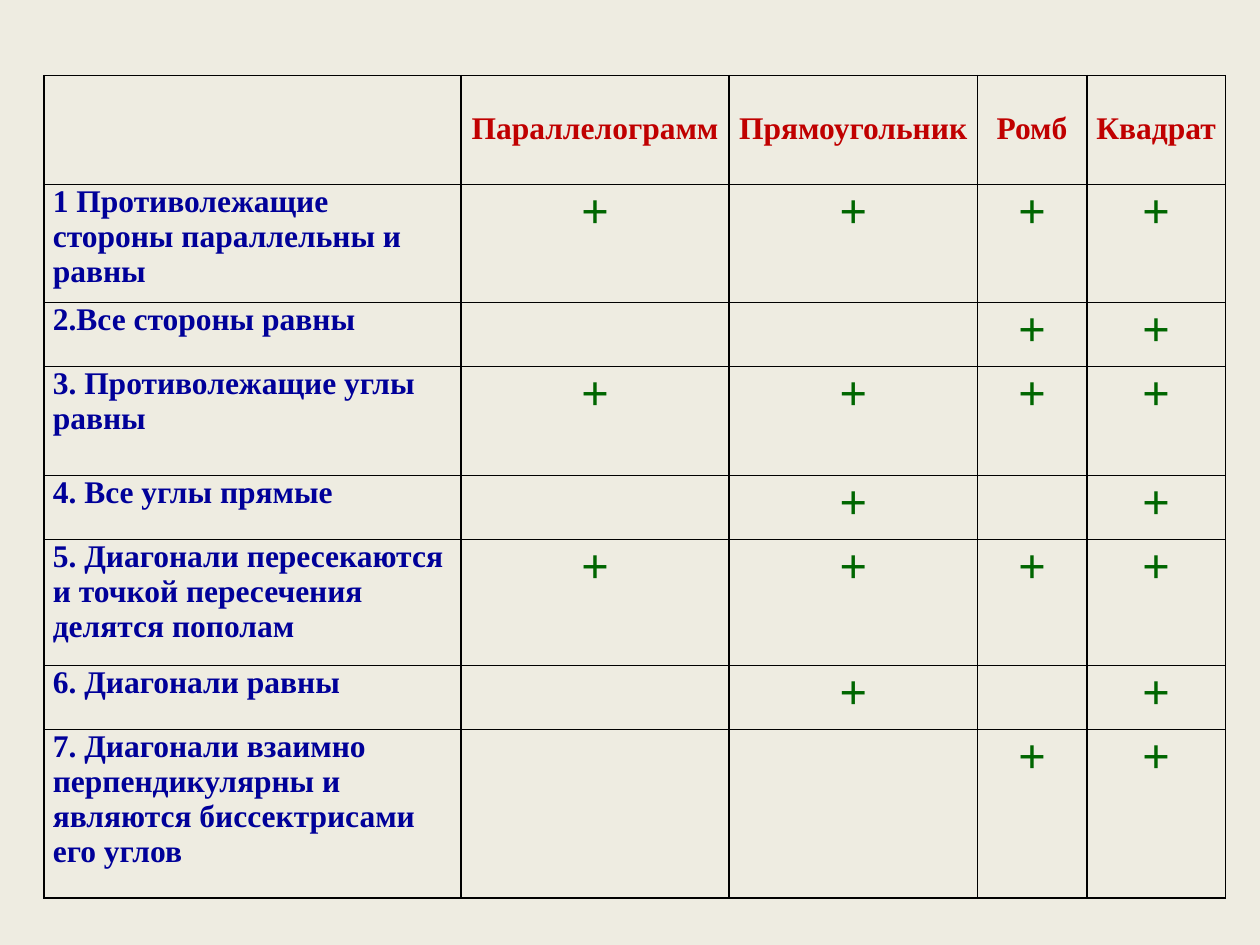
from lxml import etree
from pptx import Presentation
from pptx.dml.color import RGBColor
from pptx.enum.text import PP_ALIGN
from pptx.oxml.ns import qn
from pptx.util import Pt

LEFT, CENTER = PP_ALIGN.LEFT, PP_ALIGN.CENTER
CREAM = RGBColor(0xEE, 0xEC, 0xE1)
RED = RGBColor(0xC0, 0x00, 0x00)
BLUE = RGBColor(0x00, 0x00, 0x99)
GREEN = RGBColor(0x00, 0x66, 0x00)
BLACK = RGBColor(0x00, 0x00, 0x00)
FONT = "Times New Roman"

SHAPES = ["Параллелограмм", "Прямоугольник", "Ромб", "Квадрат"]
# property, one mark per shape, row height
TRAITS = [
    ("1 Противолежащие стороны параллельны и равны", "++++", 67.4),
    ("2.Все стороны равны", "--++", 36.6),
    ("3. Противолежащие углы равны", "++++", 62.3),
    ("4. Все углы прямые", "-+-+", 36.6),
    ("5. Диагонали пересекаются и точкой пересечения делятся пополам",
     "++++", 72),
    ("6. Диагонали равны", "-+-+", 36.6),
    ("7. Диагонали взаимно перпендикулярны и являются биссектрисами его углов",
     "--++", 96.3),
]
HEAD = 62.3
WIDTHS = [238.3, 153.2, 141.8, 62.6, 79.2]
X, Y = 25.2, 43.2


def border(cell):
    props = cell._tc.get_or_add_tcPr()
    for i, side in enumerate(("lnL", "lnR", "lnT", "lnB")):
        line = etree.Element(qn("a:" + side), w=str(Pt(1)))
        fill = etree.SubElement(line, qn("a:solidFill"))
        etree.SubElement(fill, qn("a:srgbClr"), val=str(BLACK))
        props.insert(i, line)


def write(cell, text, color, size=18, align=CENTER, top=0):
    cell.margin_left = cell.margin_right = Pt(5)
    cell.margin_top, cell.margin_bottom = Pt(top), Pt(0)
    para = cell.text_frame.paragraphs[0]
    para.alignment = align
    run = para.add_run()
    run.text = text
    font = run.font
    font.name, font.size, font.bold = FONT, Pt(size), True
    font.color.rgb = color


deck = Presentation()
deck.slide_width, deck.slide_height = Pt(720), Pt(540)
slide = deck.slides.add_slide(deck.slide_layouts[6])
slide.background.fill.solid()
slide.background.fill.fore_color.rgb = CREAM

heights = [HEAD] + [high for _, _, high in TRAITS]
table = slide.shapes.add_table(
    len(heights), len(WIDTHS), Pt(X), Pt(Y),
    Pt(sum(WIDTHS)), Pt(sum(heights))).table
table.first_row = table.horz_banding = False
for col, wide in zip(table.columns, WIDTHS):
    col.width = Pt(wide)
for row, high in zip(table.rows, heights):
    row.height = Pt(high)
for cell in table.iter_cells():
    cell.fill.background()
    border(cell)

for c, name in enumerate(SHAPES, 1):
    write(table.cell(0, c), name, RED, top=20.7)
for r, (trait, marks, _) in enumerate(TRAITS, 1):
    write(table.cell(r, 0), trait, BLUE, align=LEFT)
    for c, mark in enumerate(marks, 1):
        if mark == "+":
            write(table.cell(r, c), mark, GREEN, size=28)

deck.save("out.pptx")
